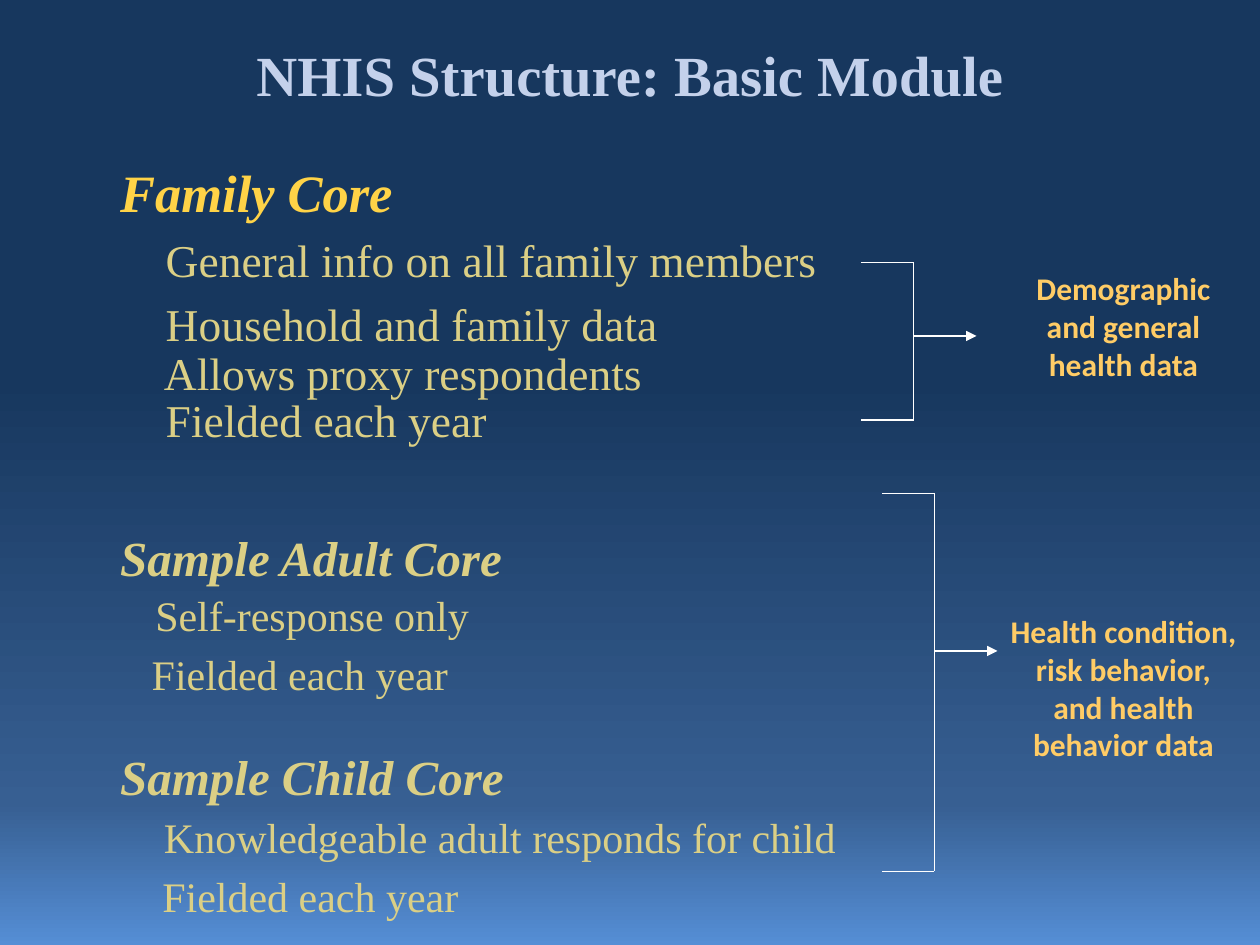
from dataclasses import dataclass

from pptx import Presentation
from pptx.dml.color import RGBColor
from pptx.enum.shapes import MSO_CONNECTOR
from pptx.enum.text import MSO_ANCHOR, MSO_AUTO_SIZE, PP_ALIGN
from pptx.oxml.ns import qn
from pptx.util import Pt
from lxml.etree import SubElement

COLORS = {
    "title": "C4D1EB", "family": "FFD347", "list": "DBCF85",
    "label": "FFCC66", "line": "FFFFFF",
}
GRADIENT = {0: "17375E", 40: "17375E", 85: "375F92", 100: "558ED5"}
SERIF, SANS = "Times New Roman", "Calibri"


@dataclass
class Line:
    text: str
    size: float
    pitch: float  # exact line height
    indent: float = 0
    color: str = "list"
    heading: bool = False


@dataclass
class Bracket:
    left: float
    right: float
    top: float
    bottom: float
    arrow_y: float
    arrow_end: float


LINES = [
    Line("Family Core", 30, 39.6, color="family", heading=True),
    Line("General info on all family members", 26, 36.3, 26),
    Line("Household and family data", 26, 36.6, 26),
    Line("Allows proxy respondents", 26, 28, 25),
    Line("Fielded each year", 26, 26.8, 26),
    Line("Sample Adult Core", 28, 79.8, heading=True),
    Line("Self-response only", 24, 30.6, 20),
    Line("Fielded each year", 24, 33.7, 18),
    Line("Sample Child Core", 28, 60.9, heading=True),
    Line("Knowledgeable adult responds for child", 24, 32.2, 25),
    Line("Fielded each year", 24, 33.7, 24),
]
LABELS = {
    "Demographic and general health data": 0,
    "Health condition, risk behavior, and health behavior data": 131,
}
BRACKETS = [
    Bracket(504, 534, 282, 498, 372, 570),
    Bracket(492, 522, 150, 240, 192, 558),
]


def paint_background(page) -> None:
    fill = page.background.fill
    fill.gradient()
    fill.gradient_angle = 270
    stops = page.element.find(".//" + qn("a:gsLst"))
    for stop in list(stops):
        stops.remove(stop)
    for percent, color in GRADIENT.items():
        stop = SubElement(stops, qn("a:gs"), pos=str(percent * 1000))
        SubElement(stop, qn("a:srgbClr"), val=color)


def place(box, left: float, top: float, width: float, height: float, anchor):
    """Move a placeholder and return its text frame."""
    for name, value in dict(left=left, top=top, width=width, height=height).items():
        setattr(box, name, Pt(value))
    frame = box.text_frame
    for name, value in dict(word_wrap=True, auto_size=MSO_AUTO_SIZE.NONE,
                            vertical_anchor=anchor).items():
        setattr(frame, name, value)
    return frame


def write(para, text: str, color: str, font: dict, layout: dict, indent: float = 0) -> None:
    for name, value in layout.items():
        setattr(para, name, value)
    properties = para._p.get_or_add_pPr()
    properties.set("marL", str(Pt(indent)))
    properties.set("indent", "0")
    SubElement(properties, qn("a:buNone"))
    span = para.add_run()
    span.text = text
    for name, value in font.items():
        setattr(span.font, name, value)
    span.font.color.rgb = RGBColor.from_string(COLORS[color])


def next_para(frame, index: int):
    return frame.add_paragraph() if index else frame.paragraphs[0]


def draw_line(group, start: tuple, end: tuple, arrow: bool = False) -> None:
    line = group.shapes.add_connector(
        MSO_CONNECTOR.STRAIGHT, *(Pt(value) for value in start + end))
    line.line.width = Pt(0.75)
    line.line.color.rgb = RGBColor.from_string(COLORS["line"])
    if arrow:
        SubElement(line.line._get_or_add_ln(), qn("a:tailEnd"), type="triangle")
    SubElement(line._element.spPr, qn("a:effectLst"))


def draw_bracket(page, bracket: Bracket) -> None:
    group = page.shapes.add_group_shape()
    for y in (bracket.top, bracket.bottom):
        draw_line(group, (bracket.left, y), (bracket.right, y))
    draw_line(group, (bracket.right, bracket.top), (bracket.right, bracket.bottom))
    draw_line(group, (bracket.right, bracket.arrow_y),
              (bracket.arrow_end, bracket.arrow_y), arrow=True)


def main() -> None:
    deck = Presentation()
    deck.slide_width, deck.slide_height = Pt(720), Pt(540)
    page = deck.slides.add_slide(deck.slide_layouts.get_by_name("Two Content"))
    paint_background(page)
    title, modules, labels = page.placeholders

    # Title
    frame = place(title, 54, 18.3, 612, 46.8, MSO_ANCHOR.BOTTOM)
    write(frame.paragraphs[0], "NHIS Structure: Basic Module", "title",
          dict(name=SERIF, size=Pt(32.4), bold=True), dict(alignment=PP_ALIGN.CENTER))

    # Modules and their details
    frame = place(modules, 61.5, 84.24, 442.8, 443.52, MSO_ANCHOR.TOP)
    for index, line in enumerate(LINES):
        write(next_para(frame, index), line.text, line.color,
              dict(name=SERIF, size=Pt(line.size), bold=line.heading, italic=line.heading),
              dict(alignment=PP_ALIGN.LEFT, line_spacing=Pt(line.pitch),
                   space_before=Pt(0)),
              line.indent)

    # Labels beside the brackets
    frame = place(labels, 570, 150.3, 144, 354.24, MSO_ANCHOR.TOP)
    for index, (text, gap) in enumerate(LABELS.items()):
        write(next_para(frame, index), text, "label",
              dict(name=SANS, size=Pt(18), bold=True),
              dict(alignment=PP_ALIGN.CENTER, space_before=Pt(gap)))

    # Brackets with arrows
    for bracket in BRACKETS:
        draw_bracket(page, bracket)

    deck.save("out.pptx")


if __name__ == "__main__":
    main()
